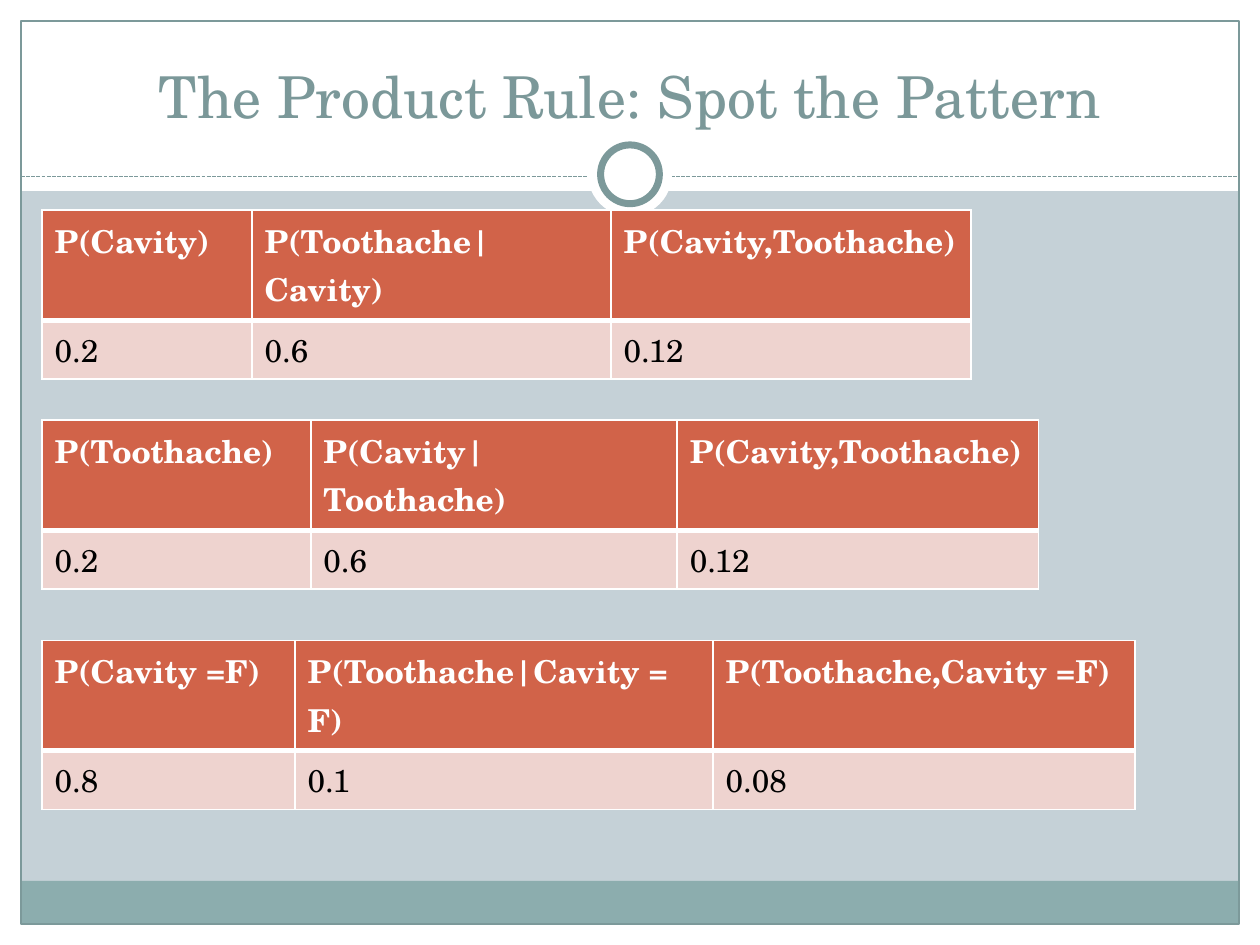
from lxml import etree
from pptx import Presentation, util as u
from pptx.dml.color import RGBColor
from pptx.enum import dml, shapes, text
from pptx.oxml import ns

HUES = {"back": "C5D1D7", "white": "FFFFFF", "band": "8CADAE", "rule": "7C999A",
        "title": "7B9899", "head": "D16349", "body": "EED3CF", "black": "000000"}
FONT = "TeX Gyre Schola"
COLS, ROWS = 60, 45
UNIT = u.Inches(10) / COLS
RECT, OVAL = shapes.MSO_SHAPE.RECTANGLE, shapes.MSO_SHAPE.OVAL


def hue(name):
    return RGBColor.from_string(HUES[name])


def grid(*units):
    """Turn grid units into slide lengths."""
    return [u.Emu(round(n * UNIT)) for n in units]


def write(frame, words, size=18, color="black", bold=False, align=None):
    para = frame.paragraphs[0]
    para.alignment = align
    run = para.add_run()
    run.text = words
    font = run.font
    font.name, font.size, font.bold = FONT, u.Pt(size), bold
    font.color.rgb = hue(color)


def edge(cell, side, width):
    """Give one side of a cell a white border."""
    line = etree.SubElement(cell._tc.get_or_add_tcPr(), ns.qn("a:ln" + side),
                            w=str(u.Pt(width)))
    fill = etree.SubElement(line, ns.qn("a:solidFill"))
    etree.SubElement(fill, ns.qn("a:srgbClr"), val=HUES["white"])


class Deck:
    def __init__(self):
        self.show = Presentation()
        self.show.slide_width, self.show.slide_height = grid(COLS, ROWS)
        self.slide = self.show.slides.add_slide(self.show.slide_layouts[6])
        back = self.slide.background.fill
        back.solid()
        back.fore_color.rgb = hue("back")

    def shape(self, kind, box, fill=None, line=None, width=0.75):
        item = self.slide.shapes.add_shape(kind, *grid(*box))
        item.shadow.inherit = False
        if fill:
            item.fill.solid()
            item.fill.fore_color.rgb = hue(fill)
        else:
            item.fill.background()
        if line:
            item.line.color.rgb = hue(line)
            item.line.width = u.Pt(width)
        else:
            item.line.fill.background()

    def dash(self, left, right, top):
        item = self.slide.shapes.add_connector(
            shapes.MSO_CONNECTOR.STRAIGHT, *grid(left, top, right, top))
        item.line.color.rgb = hue("rule")
        item.line.width = u.Pt(0.75)
        item.line.dash_style = dml.MSO_LINE.SQUARE_DOT
        etree.SubElement(item._element.spPr, ns.qn("a:effectLst"))

    def title(self, box, words):
        frame = self.slide.shapes.add_textbox(*grid(*box)).text_frame
        frame.word_wrap = True
        frame.vertical_anchor = text.MSO_ANCHOR.BOTTOM
        write(frame, words, size=33, color="title", align=text.PP_ALIGN.CENTER)

    def table(self, left, top, wide, data, tall=(5.25, 2.8)):
        item = self.slide.shapes.add_table(
            len(data), len(wide), *grid(left, top, sum(wide), sum(tall))).table
        for col, size in zip(item.columns, grid(*wide)):
            col.width = size
        for r, (row, size) in enumerate(zip(item.rows, grid(*tall))):
            row.height = size
            head = r == 0
            for cell, words in zip(row.cells, data[r]):
                write(cell.text_frame, words, bold=head,
                      color="white" if head else "black")
                for side, width in zip("LRTB", (1, 1, 1, 3) if head else (1, 1, 3, 1)):
                    edge(cell, side, width)
                cell.fill.solid()
                cell.fill.fore_color.rgb = hue("head" if head else "body")


def main():
    deck = Deck()
    inner = COLS - 2
    for box in ((0, 44, COLS, 1), (0, 0, COLS, 9.1),
                (0, 0, 1, ROWS), (COLS - 1, 0, 1, ROWS)):
        deck.shape(RECT, box, "white")
    deck.shape(RECT, (1, 41.95, inner, 2.05), "band")
    deck.shape(RECT, (1, 1, inner, 43), line="rule")
    deck.dash(1, COLS - 1, 8.4)
    deck.shape(OVAL, (28, 6.3, 4, 4), "white")
    deck.shape(OVAL, (28.6, 6.9, 2.8, 2.8), "white", "rule", 4)
    deck.title((2, 1.5, 56, 5), "The Product Rule: Spot the Pattern")

    tables = (
        (10, (10, 17.1, 17.15),
         (("P(Cavity)", "P(Toothache|Cavity)", "P(Cavity,Toothache)"),
          ("0.2", "0.6", "0.12"))),
        (20, (12.8, 17.45, 17.2),
         (("P(Toothache)", "P(Cavity| Toothache)", "P(Cavity,Toothache)"),
          ("0.2", "0.6", "0.12"))),
        (30.5, (12.05, 19.9, 20.1),
         (("P(Cavity =F)", "P(Toothache|Cavity = F)", "P(Toothache,Cavity =F)"),
          ("0.8", "0.1", "0.08"))),
    )
    for top, wide, data in tables:
        deck.table(2, top, wide, data)
    deck.show.save("out.pptx")


if __name__ == "__main__":
    main()
